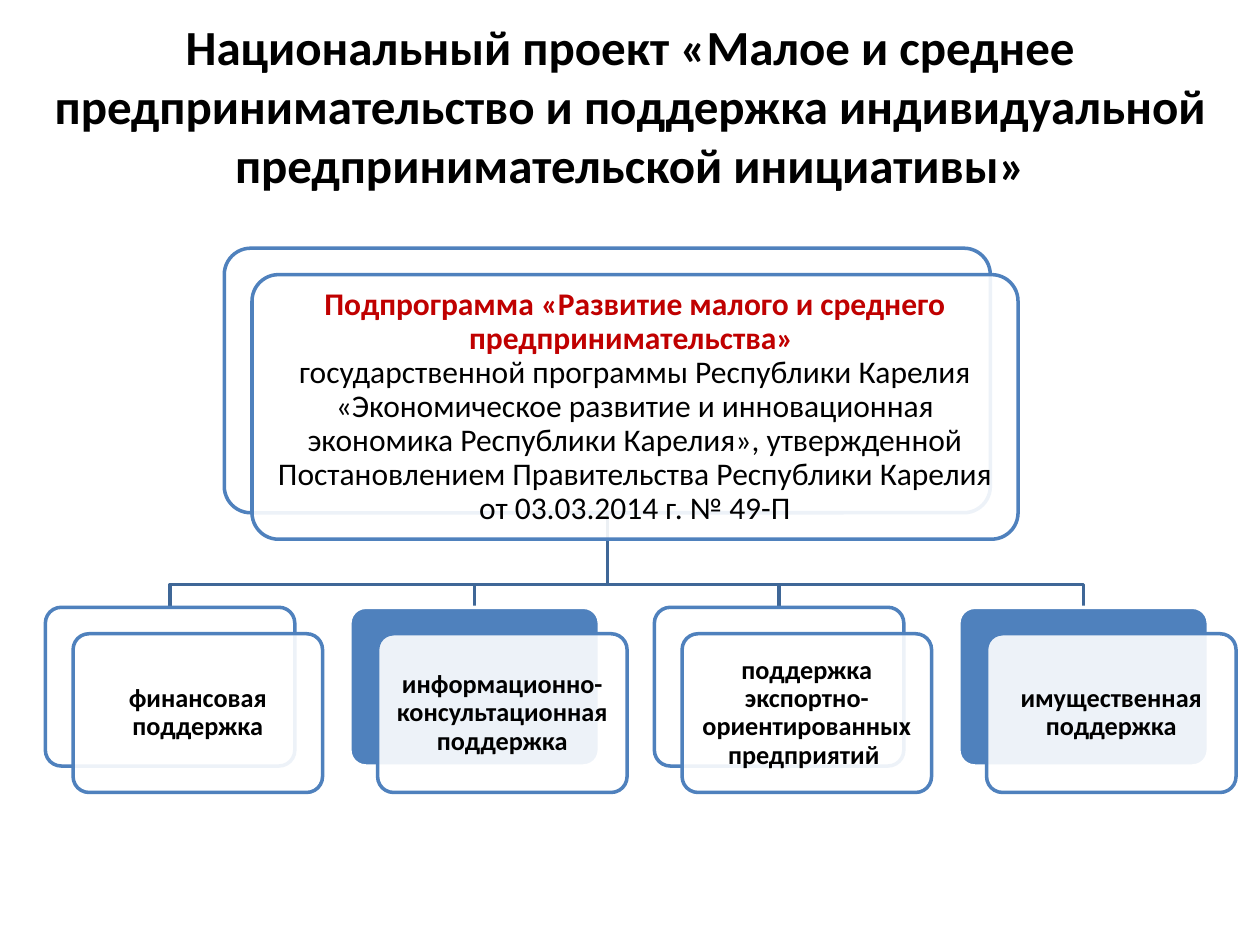
from dataclasses import dataclass

import pptx
import pptx.dml.color
import pptx.enum.shapes
import pptx.enum.text
import pptx.oxml.ns
import pptx.util
from lxml import etree
from pptx.dml.color import RGBColor
from pptx.util import Inches

BLACK = RGBColor(0x00, 0x00, 0x00)
WHITE = RGBColor(0xFF, 0xFF, 0xFF)
BLUE = RGBColor(0x4F, 0x81, 0xBD)
DARK_BLUE = RGBColor(0x3F, 0x67, 0x97)
RED = RGBColor(0xC0, 0x00, 0x00)

FONT = "Calibri"
LINE_WIDTH = 2
CORNER = 0.1
OFFSET_X, OFFSET_Y = 0.22, 0.21

ROOT_CENTER, ROOT_BOTTOM, BUS_Y = 4.82, 4.07, 4.64
CARD_LEFT, CARD_TOP, CARD_WIDTH, CARD_HEIGHT = 0.36, 4.82, 1.98, 1.26
CARD_STEP = 7.25 / 3


@dataclass(frozen=True)
class Box:
    left: float
    top: float
    width: float
    height: float

    def lengths(self) -> tuple:
        return tuple(Inches(n) for n in (self.left, self.top, self.width, self.height))

    def moved(self, x: float, y: float) -> "Box":
        return Box(self.left + x, self.top + y, self.width, self.height)

    def shrunk(self, margin: float) -> "Box":
        return Box(self.left + margin, self.top + margin,
                   self.width - 2 * margin, self.height - 2 * margin)


@dataclass(frozen=True)
class Line:
    text: str
    color: RGBColor = BLACK
    bold: bool = True


@dataclass(frozen=True)
class Card:
    text: str
    back_fill: RGBColor
    back_line: RGBColor


CARDS = [
    Card("финансовая поддержка", WHITE, BLUE),
    Card("информационно-консультационная поддержка", BLUE, WHITE),
    Card("поддержка экспортно-ориентированных предприятий ", WHITE, BLUE),
    Card("имущественная поддержка", BLUE, WHITE),
]

TITLE = Line("Национальный проект «Малое и среднее предпринимательство и поддержка "
             "индивидуальной предпринимательской инициативы»")
ROOT_LINES = [
    Line("Подпрограмма «Развитие малого и среднего предпринимательства» ", RED),
    Line("государственной программы Республики Карелия «Экономическое развитие и "
         "инновационная экономика Республики Карелия», утвержденной Постановлением "
         "Правительства Республики Карелия от 03.03.2014 г. № 49-П", bold=False),
]


def add_text(slide, box: Box, lines: list[Line], *, size: float,
             inset: tuple[float, float], spacing: float = 1.0) -> None:
    """Add a centred text box; inset is the horizontal and vertical margin."""
    frame = slide.shapes.add_textbox(*box.lengths()).text_frame
    frame.word_wrap = True
    frame.vertical_anchor = pptx.enum.text.MSO_ANCHOR.MIDDLE
    frame.margin_left = frame.margin_right = Inches(inset[0])
    frame.margin_top = frame.margin_bottom = Inches(inset[1])
    for index, line in enumerate(lines):
        paragraph = frame.add_paragraph() if index else frame.paragraphs[0]
        paragraph.alignment = pptx.enum.text.PP_ALIGN.CENTER
        paragraph.line_spacing = spacing
        run = paragraph.add_run()
        run.text = line.text
        run.font.name = FONT
        run.font.size = pptx.util.Pt(size)
        run.font.bold = line.bold
        run.font.color.rgb = line.color


def add_rounded(slide, box: Box, fill: RGBColor, line: RGBColor, opacity: int = 100) -> None:
    shape = slide.shapes.add_shape(
        pptx.enum.shapes.MSO_SHAPE.ROUNDED_RECTANGLE, *box.lengths())
    shape.adjustments[0] = CORNER
    shape.shadow.inherit = False
    shape.fill.solid()
    shape.fill.fore_color.rgb = fill
    shape.line.color.rgb = line
    shape.line.width = pptx.util.Pt(LINE_WIDTH)
    if opacity < 100:
        color = shape.fill._xPr.find(".//" + pptx.oxml.ns.qn("a:srgbClr"))
        etree.SubElement(color, pptx.oxml.ns.qn("a:alpha"), val=str(opacity * 1000))


def add_node(slide, box: Box, fill: RGBColor, line: RGBColor, lines: list[Line], *,
             size: float, margin: float, inset: float) -> None:
    """Draw a back plate with a translucent, captioned front plate offset from it."""
    front = box.moved(OFFSET_X, OFFSET_Y)
    add_rounded(slide, box, fill, line)
    add_rounded(slide, front, WHITE, BLUE, opacity=90)
    add_text(slide, front.shrunk(margin), lines, size=size,
             inset=(inset, inset), spacing=0.9)


def add_branch(slide, end_x: float) -> None:
    """Draw the elbow line from the root node down to one card."""
    points = [(ROOT_CENTER, BUS_Y), (end_x, BUS_Y), (end_x, CARD_TOP)]
    builder = slide.shapes.build_freeform(Inches(ROOT_CENTER), Inches(ROOT_BOTTOM))
    builder.add_line_segments([(Inches(x), Inches(y)) for x, y in points], close=False)
    branch = builder.convert_to_shape()
    branch.shadow.inherit = False
    branch.fill.background()
    branch.line.color.rgb = DARK_BLUE
    branch.line.width = pptx.util.Pt(LINE_WIDTH)


def main() -> None:
    presentation = pptx.Presentation()
    presentation.slide_width = Inches(10)
    presentation.slide_height = Inches(7.5)
    slide = presentation.slides.add_slide(presentation.slide_layouts[6])

    add_text(slide, Box(0, 0.21, 10, 1.25), [TITLE], size=28, inset=(0.1, 0.05))

    boxes = [Box(CARD_LEFT + index * CARD_STEP, CARD_TOP, CARD_WIDTH, CARD_HEIGHT)
             for index in range(len(CARDS))]
    for box in reversed(boxes):
        add_branch(slide, box.left + box.width / 2)

    add_node(slide, Box(1.78, 1.97, 6.08, 2.1), WHITE, BLUE, ROOT_LINES,
             size=18, margin=0.06, inset=0.07)
    for box, card in zip(boxes, CARDS):
        add_node(slide, box, card.back_fill, card.back_line, [Line(card.text)],
                 size=15, margin=0.04, inset=0.06)

    presentation.save("out.pptx")


if __name__ == "__main__":
    main()
